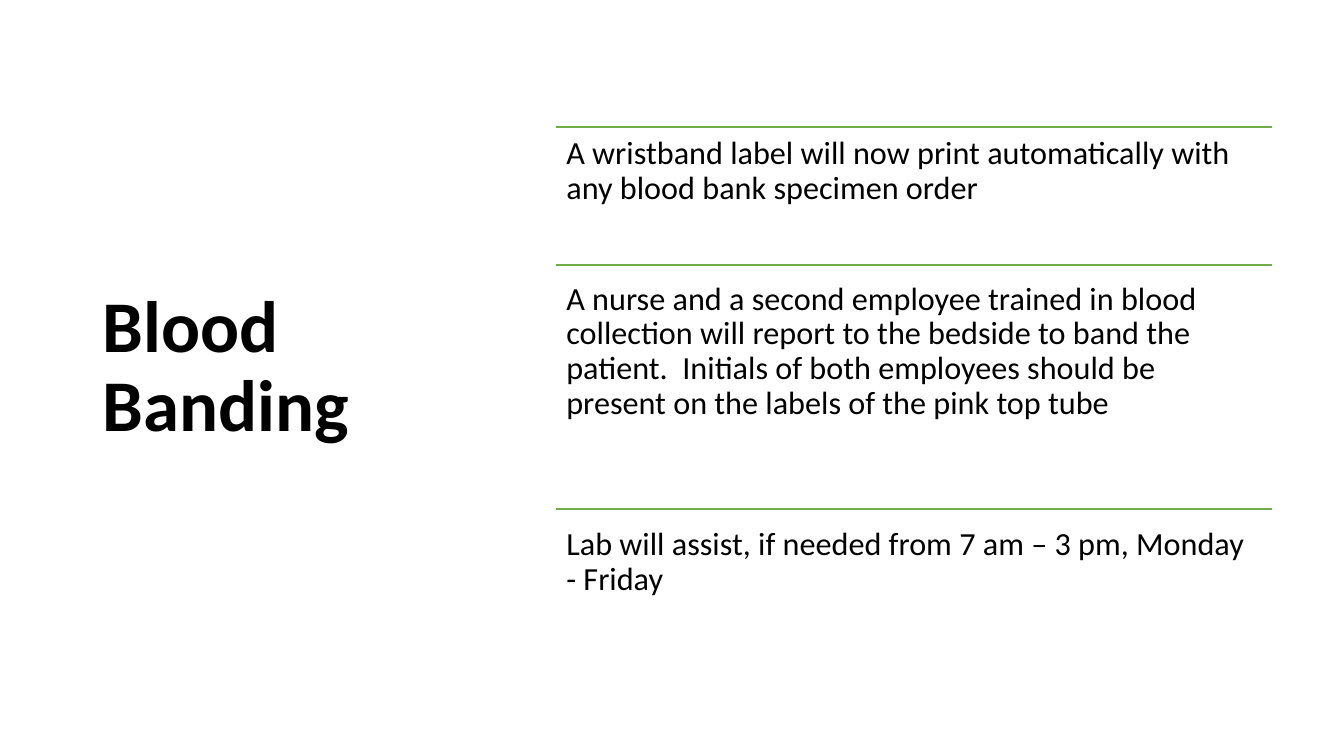
from lxml import etree
from pptx import Presentation
from pptx.dml.color import RGBColor
from pptx.enum.shapes import MSO_CONNECTOR
from pptx.enum.text import MSO_ANCHOR, MSO_AUTO_SIZE, PP_ALIGN
from pptx.oxml.ns import qn
from pptx.util import Inches, Pt

STRAIGHT = MSO_CONNECTOR.STRAIGHT
LEFT = PP_ALIGN.LEFT
TOP, MIDDLE = MSO_ANCHOR.TOP, MSO_ANCHOR.MIDDLE
NO_AUTOFIT = MSO_AUTO_SIZE.NONE

SLIDE_WIDTH, SLIDE_HEIGHT = Inches(13.33), Inches(7.5)
TITLE_ONLY = 5
FONT = "Calibri"
BLACK, GREEN = "000000", "70AD47"
STEP_LEFT, STEP_WIDTH, STEP_HEIGHT = 41.4, 53.26, 27.07
STEPS = [
    (16.8, 16.8, "A wristband label will now print automatically with any blood bank specimen order"),
    (35.07, 36, "A nurse and a second employee trained in blood collection will report to the "
                "bedside to band the patient.  Initials of both employees should be present on "
                "the labels of the pink top tube"),
    (67.33, 68.53, "Lab will assist, if needed from 7 am – 3 pm, Monday - Friday"),
]


def color(hex_string):
    """Turn a hex string into a colour."""
    return RGBColor.from_string(hex_string)


def across(percent):
    """Return a share of the slide's width."""
    return round(SLIDE_WIDTH * percent / 100)


def down(percent):
    """Return a share of the slide's height."""
    return round(SLIDE_HEIGHT * percent / 100)


def write(shape, text, size, space_after, anchor, bold=False):
    """Fill a shape with one left-aligned, formatted paragraph."""
    frame = shape.text_frame
    frame.text = text
    frame.word_wrap = True
    frame.auto_size = NO_AUTOFIT
    frame.vertical_anchor = anchor
    paragraph = frame.paragraphs[0]
    paragraph.alignment = LEFT
    paragraph.line_spacing = 0.9
    paragraph.space_before = Pt(0)
    paragraph.space_after = Pt(space_after)
    font = paragraph.runs[0].font
    font.name, font.size, font.bold = FONT, Pt(size), bold
    font.color.rgb = color(BLACK)


def add_title(slide, text):
    """Place the slide title in the left column."""
    title = slide.shapes.title
    title.left, title.top = across(6.9), down(8.13)
    title.width, title.height = across(27.68), down(81.2)
    write(title, text, 52, 6, MIDDLE, bold=True)


def add_rule(slide, top):
    """Draw a thin green rule across the step column."""
    rule = slide.shapes.add_connector(
        STRAIGHT, across(STEP_LEFT), down(top), across(STEP_LEFT + STEP_WIDTH), down(top))
    rule.line.color.rgb = color(GREEN)
    rule.line.width = Pt(1)
    etree.SubElement(rule.element.spPr, qn("a:effectLst"))


def add_step(slide, top, text):
    """Place the text of one step in the right column."""
    box = slide.shapes.add_textbox(
        across(STEP_LEFT), down(top), across(STEP_WIDTH), down(STEP_HEIGHT))
    frame = box.text_frame
    frame.margin_left = frame.margin_right = Inches(0.1)
    frame.margin_top = frame.margin_bottom = Inches(0.1)
    write(box, text, 23, 8, TOP)


def main():
    """Build and save the slide."""
    presentation = Presentation()
    presentation.slide_width, presentation.slide_height = SLIDE_WIDTH, SLIDE_HEIGHT
    slide = presentation.slides.add_slide(presentation.slide_layouts[TITLE_ONLY])
    add_title(slide, "Blood Banding")
    for rule_top, text_top, text in STEPS:
        add_rule(slide, rule_top)
        add_step(slide, text_top, text)
    presentation.save("out.pptx")


if __name__ == "__main__":
    main()
